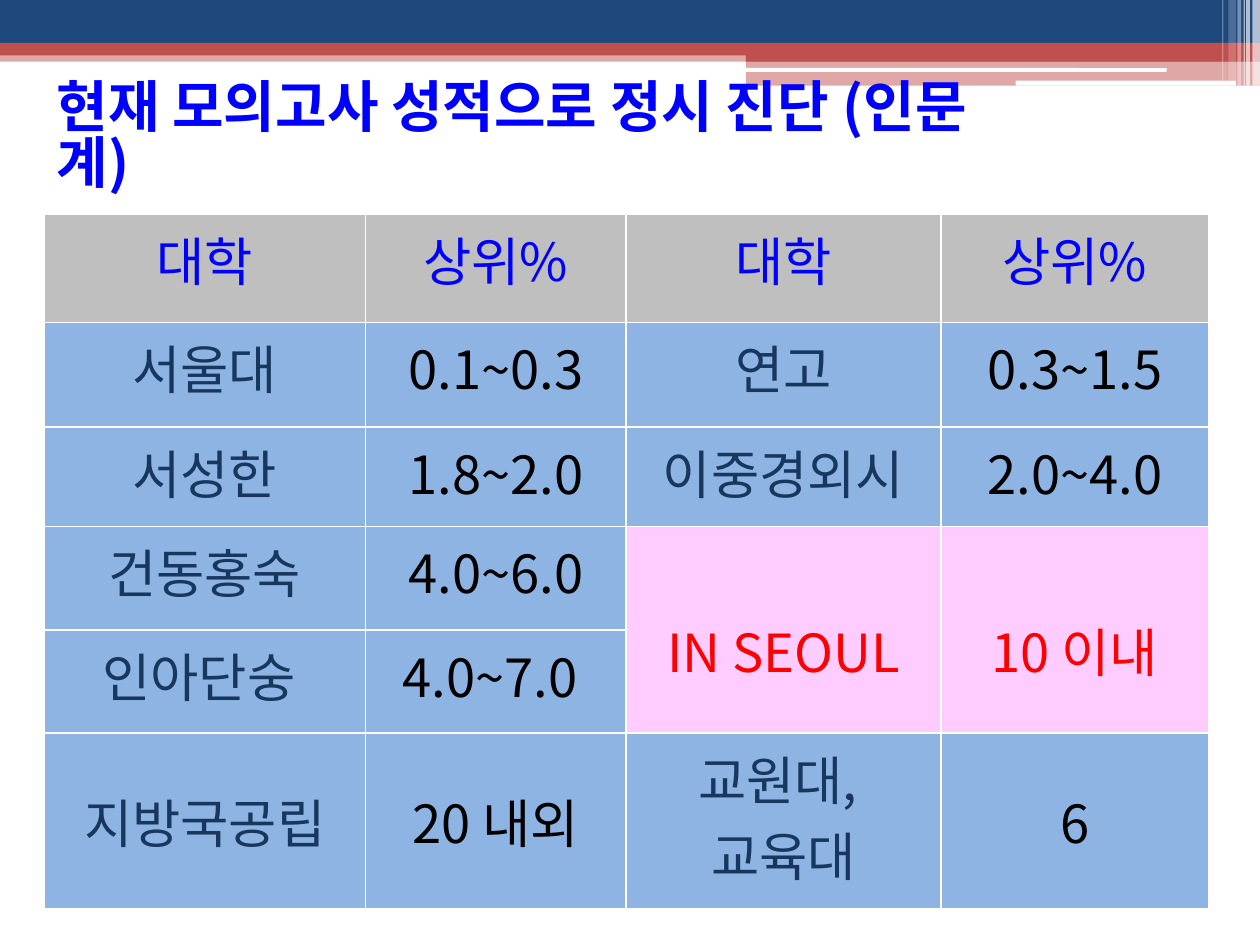
"""Builds a slide with a table of university admission cut-offs for the humanities track."""
from lxml import etree
from pptx import Presentation, util as u
from pptx.dml.color import RGBColor
from pptx.enum import shapes, text
from pptx.oxml.ns import qn

THEME = dict(font="Noto Sans CJK KR", title_size=32, cell_size=30, navy="1F497D", red="C0504D",
             white="FFFFFF", blue="0000FF", grey="BFBFBF", sky="8EB4E3", pink="FFCCFF",
             ink="17375E", black="000000", alert="FF0000")

deck = Presentation()
deck.slide_width, deck.slide_height = u.Inches(10), u.Inches(7.5)
slide = deck.slides.add_slide(deck.slide_layouts[5])


def colour(name):
    return RGBColor.from_string(THEME[name])


def style(paragraph, size, ink, bold=False):
    for run in paragraph.runs:
        for key, value in dict(name=THEME["font"], size=u.Pt(size), bold=bold).items():
            setattr(run.font, key, value)
        run.font.color.rgb = colour(ink)
        etree.SubElement(run.font._element, qn("a:ea"), typeface=THEME["font"])


RECT, ROUND = shapes.MSO_SHAPE.RECTANGLE, shapes.MSO_SHAPE.ROUNDED_RECTANGLE
bands = [
    (RECT, 0, 0.4, 10, 0.09, "red", 50),
    (RECT, 0, 0, 10, 0.34, "navy", 100),
    (RECT, 0, 0.34, 10, 0.1, "red", 100),
    (RECT, 5.92, 0.39, 4.08, 0.1, "red", 100),
    (RECT, 5.92, 0.48, 4.08, 0.2, "red", 50),
    (ROUND, 5.91, 0.54, 3.35, 0.03, "white", 100),
    (ROUND, 8.06, 0.64, 1.75, 0.04, "white", 100),
]
stripes = [(9.94, 0.06, 0.68, 65), (9.89, 0.03, 0.68, 65), (9.87, 0.01, 0.68, 60),
           (9.82, 0.03, 0.68, 40), (9.75, 0.06, 0.64, 20), (9.7, 0.01, 0.64, 30)]
bands += [(RECT, left, 0, width, height, "white", opacity) for left, width, height, opacity in stripes]

for preset, left, top, width, height, tint, opacity in bands:
    band = slide.shapes.add_shape(preset, *map(u.Inches, (left, top, width, height)))
    band.shadow.inherit = False
    band.line.fill.background()
    band.fill.solid()
    band.fill.fore_color.rgb = colour(tint)
    if opacity < 100:
        tint_xml = band._element.spPr.find(".//" + qn("a:srgbClr"))
        etree.SubElement(tint_xml, qn("a:alpha"), val=str(opacity * 1000))

column_widths = [2.55, 2.07, 2.5, 2.12]
row_heights = [0.86, 0.83, 0.79, 0.82, 0.82, 1.39]
cutoffs = [
    ["대학", "상위%", "대학", "상위%"],
    ["서울대", "0.1~0.3", "연고", "0.3~1.5"],
    ["서성한", "1.8~2.0", "이중경외시", "2.0~4.0"],
    ["건동홍숙", "4.0~6.0", "IN SEOUL", "10 이내"],
    ["인아단숭 ", "4.0~7.0 ", "", ""],
    ["지방국공립", "20 내외", "교원대, \n교육대", "6"],
]
grid = slide.shapes.add_table(6, 4, *map(u.Inches, (0.35, 1.7, sum(column_widths), sum(row_heights)))).table
for column, width in zip(grid.columns, column_widths):
    column.width = u.Inches(width)
for row, height in zip(grid.rows, row_heights):
    row.height = u.Inches(height)

for r, entries in enumerate(cutoffs):
    for c, entry in enumerate(entries):
        cell = grid.cell(r, c)
        in_seoul = r in (3, 4) and c > 1
        fill, ink = "sky", "black" if c % 2 else "ink"
        if r == 0:
            fill, ink = "grey", "blue"
        elif in_seoul:
            fill, ink = "pink", "alert"
        for side in ("lnL", "lnR", "lnT", "lnB"):
            border = etree.SubElement(cell._tc.get_or_add_tcPr(), qn("a:" + side), w=str(u.Pt(1)))
            paint = etree.SubElement(border, qn("a:solidFill"))
            etree.SubElement(paint, qn("a:srgbClr"), val=THEME["white"])
        cell.fill.solid()
        cell.fill.fore_color.rgb = colour(fill)
        if entry:
            cell.text = entry
        if in_seoul:
            cell.margin_top = u.Inches(0.37)
        if in_seoul or (r == 5 and c != 2):
            cell.vertical_anchor = text.MSO_ANCHOR.MIDDLE
        for paragraph in cell.text_frame.paragraphs:
            paragraph.alignment = text.PP_ALIGN.CENTER
            style(paragraph, THEME["cell_size"], ink)

for c in (2, 3):
    grid.cell(3, c).merge(grid.cell(4, c))

title = slide.shapes.title
slide.shapes._spTree.append(title._element)
for key, value in dict(left=0.35, top=0.6, width=7.95, height=0.64).items():
    setattr(title, key, u.Inches(value))
frame = title.text_frame
frame.text = "현재 모의고사 성적으로 정시 진단 (인문계)"
for key, value in dict(word_wrap=True, auto_size=text.MSO_AUTO_SIZE.NONE,
                       vertical_anchor=text.MSO_ANCHOR.TOP).items():
    setattr(frame, key, value)
heading = frame.paragraphs[0]
heading.alignment, heading.line_spacing = text.PP_ALIGN.LEFT, 0.84
style(heading, THEME["title_size"], "blue", bold=True)

deck.save("out.pptx")
